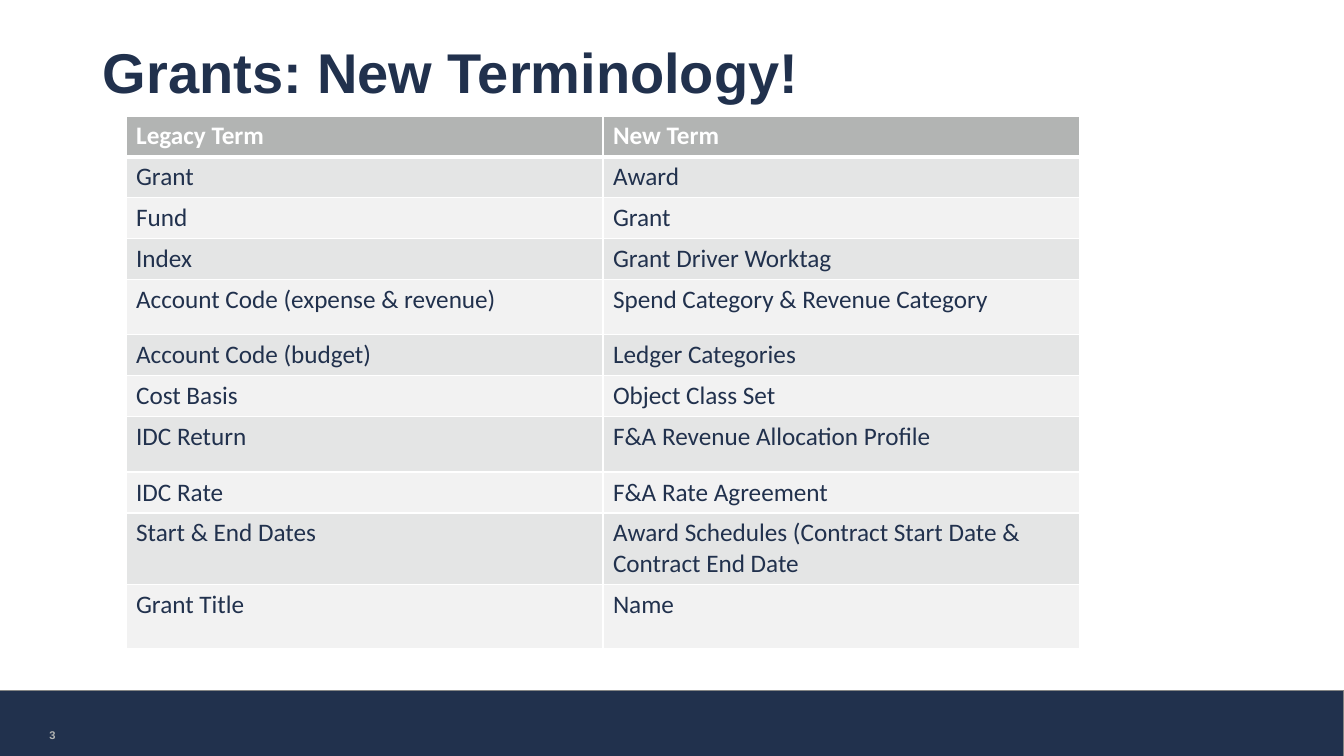
from lxml import etree
from pptx import Presentation
from pptx.dml.color import RGBColor
from pptx.enum.shapes import MSO_SHAPE
from pptx.enum.text import MSO_ANCHOR, MSO_AUTO_SIZE, PP_ALIGN
from pptx.oxml.ns import qn
from pptx.util import Inches, Pt

COLORS = {
    "navy": "21314D",
    "silver": "B2B4B3",
    "outline": "848584",
    "band_dark": "E4E5E5",
    "band_light": "F2F2F2",
    "white": "FFFFFF",
}

TERMS = [
    ("Legacy Term", "New Term"),
    ("Grant", "Award"),
    ("Fund", "Grant"),
    ("Index", "Grant Driver Worktag"),
    ("Account Code (expense & revenue)", "Spend Category & Revenue Category"),
    ("Account Code (budget)", "Ledger Categories"),
    ("Cost Basis", "Object Class Set"),
    ("IDC Return", "F&A Revenue Allocation Profile"),
    ("IDC Rate", "F&A Rate Agreement"),
    ("Start & End Dates",
     "Award Schedules (Contract Start Date & Contract End Date"),
    ("Grant Title", "Name"),
]
ROW_HEIGHT = 0.37
TALL_ROWS = {4: 0.55, 7: 0.55, 9: 0.64, 10: 0.64}


def color(name):
    return RGBColor.from_string(COLORS[name])


class SlideBuilder:
    """Holds the text styles and the current slide."""

    styles = {
        "title": {"name": "Arial", "size": Pt(40), "bold": True, "color": "navy"},
        "number": {"name": "Arial", "size": Pt(8), "bold": True, "color": "silver"},
        "header": {"name": "Calibri", "size": Pt(18), "bold": True, "color": "white"},
        "body": {"name": "Calibri", "size": Pt(18), "bold": False, "color": "navy"},
    }

    def __init__(self, presentation):
        self.slide = presentation.slides.add_slide(presentation.slide_layouts[5])

    def set_text(self, text_frame, text, style):
        text_frame.text = text
        paragraph = text_frame.paragraphs[0]
        font = paragraph.runs[0].font
        for attribute, value in self.styles[style].items():
            if attribute == "color":
                font.color.rgb = color(value)
            else:
                setattr(font, attribute, value)
        return paragraph

    def format_frame(self, text_frame):
        settings = {"word_wrap": True, "auto_size": MSO_AUTO_SIZE.NONE,
                    "vertical_anchor": MSO_ANCHOR.MIDDLE}
        for attribute, value in settings.items():
            setattr(text_frame, attribute, value)

    def bar(self, left, top, width, height):
        shape = self.slide.shapes.add_shape(
            MSO_SHAPE.RECTANGLE, Inches(left), Inches(top), Inches(width), Inches(height))
        shape.shadow.inherit = False
        shape.fill.solid()
        shape.fill.fore_color.rgb = color("navy")
        shape.line.color.rgb = color("outline")
        shape.line.width = Pt(1)

    def title(self, text, left, top, width, height):
        shape = self.slide.shapes.title
        position = {"left": left, "top": top, "width": width, "height": height}
        for attribute, value in position.items():
            setattr(shape, attribute, Inches(value))
        self.format_frame(shape.text_frame)
        paragraph = self.set_text(shape.text_frame, text, "title")
        paragraph.alignment = PP_ALIGN.LEFT
        paragraph.line_spacing = 0.9

    def page_number(self, text, left, top, width, height):
        shape = self.slide.shapes.add_textbox(
            Inches(left), Inches(top), Inches(width), Inches(height))
        self.format_frame(shape.text_frame)
        self.set_text(shape.text_frame, text, "number").alignment = PP_ALIGN.CENTER

    def borders(self, cell, widths):
        properties = cell._tc.get_or_add_tcPr()
        for side, width in widths.items():
            line = etree.SubElement(properties, qn(f"a:ln{side}"), w=str(Pt(width)))
            fill = etree.SubElement(line, qn("a:solidFill"))
            etree.SubElement(fill, qn("a:srgbClr"), val=COLORS["white"])

    def table(self, rows, left, top, column_width):
        heights = [TALL_ROWS.get(index, ROW_HEIGHT) for index in range(len(rows))]
        columns = len(rows[0])
        table = self.slide.shapes.add_table(
            len(rows), columns, Inches(left), Inches(top),
            Inches(column_width * columns), Inches(sum(heights))).table
        table.horz_banding = False
        for column in table.columns:
            column.width = Inches(column_width)
        for index, texts in enumerate(rows):
            table.rows[index].height = Inches(heights[index])
            band = "band_dark" if index % 2 else "band_light"
            # A thicker rule separates the header from the terms
            widths = {"L": 1, "R": 1, "T": 3 if index == 1 else 1,
                      "B": 3 if index == 0 else 1}
            for column_index, text in enumerate(texts):
                cell = table.cell(index, column_index)
                self.borders(cell, widths)
                cell.fill.solid()
                cell.fill.fore_color.rgb = color(band if index else "silver")
                self.set_text(cell.text_frame, text, "body" if index else "header")


def main():
    presentation = Presentation()
    presentation.slide_width = Inches(13.33)
    presentation.slide_height = Inches(7.5)
    builder = SlideBuilder(presentation)

    # Footer
    builder.bar(-0.01, 6.85, 13.34, 0.66)
    builder.page_number("3", 0.27, 7.09, 0.5, 0.4)

    # Title and terminology table
    builder.title("Grants: New Terminology!", 0.92, 0.35, 11.5, 0.8)
    builder.table(TERMS, 1.25, 1.15, 4.73)

    presentation.save("out.pptx")


if __name__ == "__main__":
    main()
